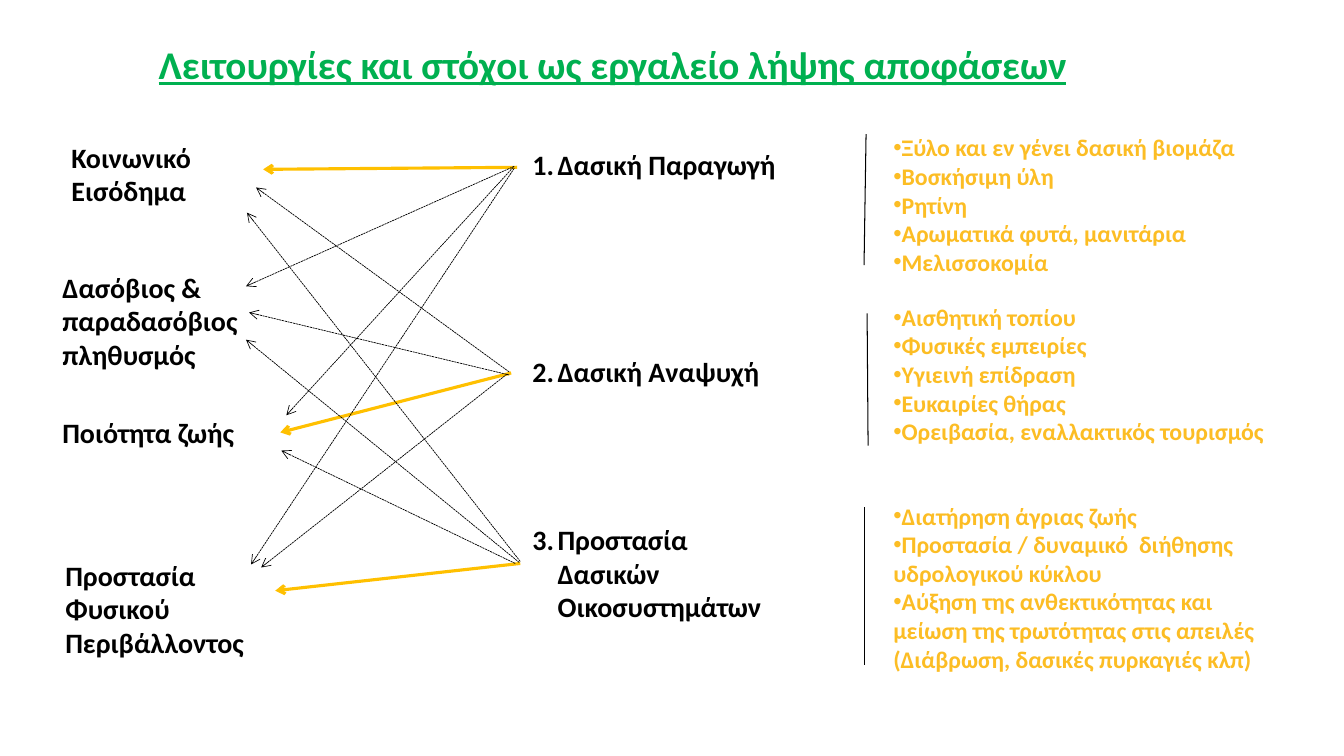
from lxml.etree import SubElement
from pptx import Presentation
from pptx.dml.color import RGBColor
from pptx.enum.dml import MSO_LINE
from pptx.enum.shapes import MSO_CONNECTOR
from pptx.enum.text import MSO_ANCHOR, MSO_AUTO_SIZE, PP_ALIGN
from pptx.oxml.ns import qn
from pptx.util import Inches, Pt

FONT = "Calibri"
COLORS = {"title": "00B050", "text": "000000", "goal": "FCBD24", "main": "FFC000"}

TITLE = "Λειτουργίες και στόχοι ως εργαλείο λήψης αποφάσεων"
TITLE_BOX = (1.42, 0.35, 9.31, 0.57)

# text, (left, top, width, height)
OBJECTIVES = [
    ("Κοινωνικό Εισόδημα", (0.61, 1.34, 2.33, 0.77)),
    ("Δασόβιος & παραδασόβιος πληθυσμός", (0.52, 2.63, 2.09, 1.11)),
    ("Ποιότητα ζωής", (0.52, 4.07, 2.1, 0.44)),
    ("Προστασία Φυσικού Περιβάλλοντος", (0.55, 5.49, 2.4, 1.11)),
]

# text, points of space above
FUNCTIONS = [
    ("Δασική Παραγωγή", 0),
    ("Δασική Αναψυχή", 124),
    ("Προστασία Δασικών Οικοσυστημάτων", 96),
]
FUNCTIONS_BOX = (5.18, 1.41, 2.7, 4.86)

# points of space above the group, goals
GOAL_GROUPS = [
    (0, ["Ξύλο και εν γένει δασική βιομάζα", "Βοσκήσιμη ύλη", "Ρητίνη",
         "Αρωματικά φυτά, μανιτάρια", "Μελισσοκομία"]),
    (19, ["Αισθητική τοπίου", "Φυσικές εμπειρίες", "Υγιεινή επίδραση",
          "Ευκαιρίες θήρας", "Ορειβασία, εναλλακτικός τουρισμός"]),
    (40, ["Διατήρηση άγριας ζωής",
          "Προστασία / δυναμικό  διήθησης υδρολογικού κύκλου",
          "Αύξηση της ανθεκτικότητας και μείωση της τρωτότητας στις απειλές "
          "(Διάβρωση, δασικές πυρκαγιές κλπ)"]),
]
GOALS_BOX = (8.76, 1.27, 4.04, 5.54)

# start x, start y, end x, end y
GROUP_BARS = [(8.59, 1.33, 8.57, 2.63), (8.6, 3.11, 8.61, 4.42), (8.57, 5.03, 8.57, 6.6)]
MAIN_ARROWS = [(5.13, 1.66, 2.61, 1.68), (5.07, 3.7, 2.78, 4.29), (5.16, 5.59, 2.73, 5.86)]
SIDE_ARROWS = [
    (5.1, 1.65, 2.44, 2.84), (5.09, 1.66, 2.84, 4.12), (5.1, 1.67, 2.49, 5.6),
    (5.05, 3.69, 2.54, 1.86), (5.05, 3.72, 2.47, 3.1), (5.03, 3.71, 2.59, 5.63),
    (5.11, 5.59, 2.79, 4.47), (5.15, 5.58, 2.44, 3.37), (5.16, 5.57, 2.45, 2.11),
]


def place(shape, box):
    shape.left, shape.top, shape.width, shape.height = map(Inches, box)
    frame = shape.text_frame
    frame.word_wrap = True
    frame.auto_size = MSO_AUTO_SIZE.NONE
    frame.vertical_anchor = MSO_ANCHOR.TOP
    return frame


def write(paragraph, text, size, color, space_before=0):
    paragraph.space_before = Pt(space_before)
    paragraph.space_after = Pt(0)
    run = paragraph.add_run()
    run.text = text
    run.font.name = FONT
    run.font.size = Pt(size)
    run.font.bold = True
    run.font.color.rgb = RGBColor.from_string(COLORS[color])
    return run


def write_list(frame, items, size, color, indent, bullet, **bullet_attributes):
    """Write (text, space above) items with one bullet style and a hanging indent."""
    for index, (text, space_before) in enumerate(items):
        paragraph = frame.add_paragraph() if index else frame.paragraphs[0]
        write(paragraph, text, size, color, space_before)
        properties = paragraph._p.get_or_add_pPr()
        properties.set("marL", str(Inches(indent)))
        properties.set("indent", str(-Inches(indent)))
        SubElement(properties, qn(bullet), bullet_attributes)


def draw_lines(slide, lines, color, width, arrow=False, dash=None):
    for ends in lines:
        connector = slide.shapes.add_connector(MSO_CONNECTOR.STRAIGHT, *map(Inches, ends))
        line = connector.line
        line.color.rgb = RGBColor.from_string(COLORS[color])
        line.width = Pt(width)
        if dash:
            line.dash_style = dash
        if arrow:
            SubElement(line._get_or_add_ln(), qn("a:tailEnd"), type="arrow")
        SubElement(connector._element.spPr, qn("a:effectLst"))


def main():
    presentation = Presentation()
    presentation.slide_width = Inches(13.33)
    presentation.slide_height = Inches(7.5)
    two_content = presentation.slide_layouts[3]
    slide = presentation.slides.add_slide(two_content)
    title, functions, goals = list(slide.placeholders)[:3]

    title_frame = place(title, TITLE_BOX)
    title_frame.word_wrap = False
    title_frame.paragraphs[0].alignment = PP_ALIGN.CENTER
    write(title_frame.paragraphs[0], TITLE, 28, "title").font.underline = True

    for text, box in OBJECTIVES:
        frame = place(slide.shapes.add_textbox(0, 0, 0, 0), box)
        write(frame.paragraphs[0], text, 20, "text")

    write_list(place(functions, FUNCTIONS_BOX), FUNCTIONS, 20, "text", 0.25,
               "a:buAutoNum", type="arabicPeriod")
    goal_items = [(goal, 0 if index else gap)
                  for gap, group in GOAL_GROUPS for index, goal in enumerate(group)]
    write_list(place(goals, GOALS_BOX), goal_items, 17, "goal", 0, "a:buChar", char="•")

    draw_lines(slide, GROUP_BARS, "text", 0.75)
    draw_lines(slide, MAIN_ARROWS, "main", 2.25, arrow=True)
    draw_lines(slide, SIDE_ARROWS, "text", 0.5, arrow=True, dash=MSO_LINE.SQUARE_DOT)

    presentation.save("out.pptx")


if __name__ == "__main__":
    main()
